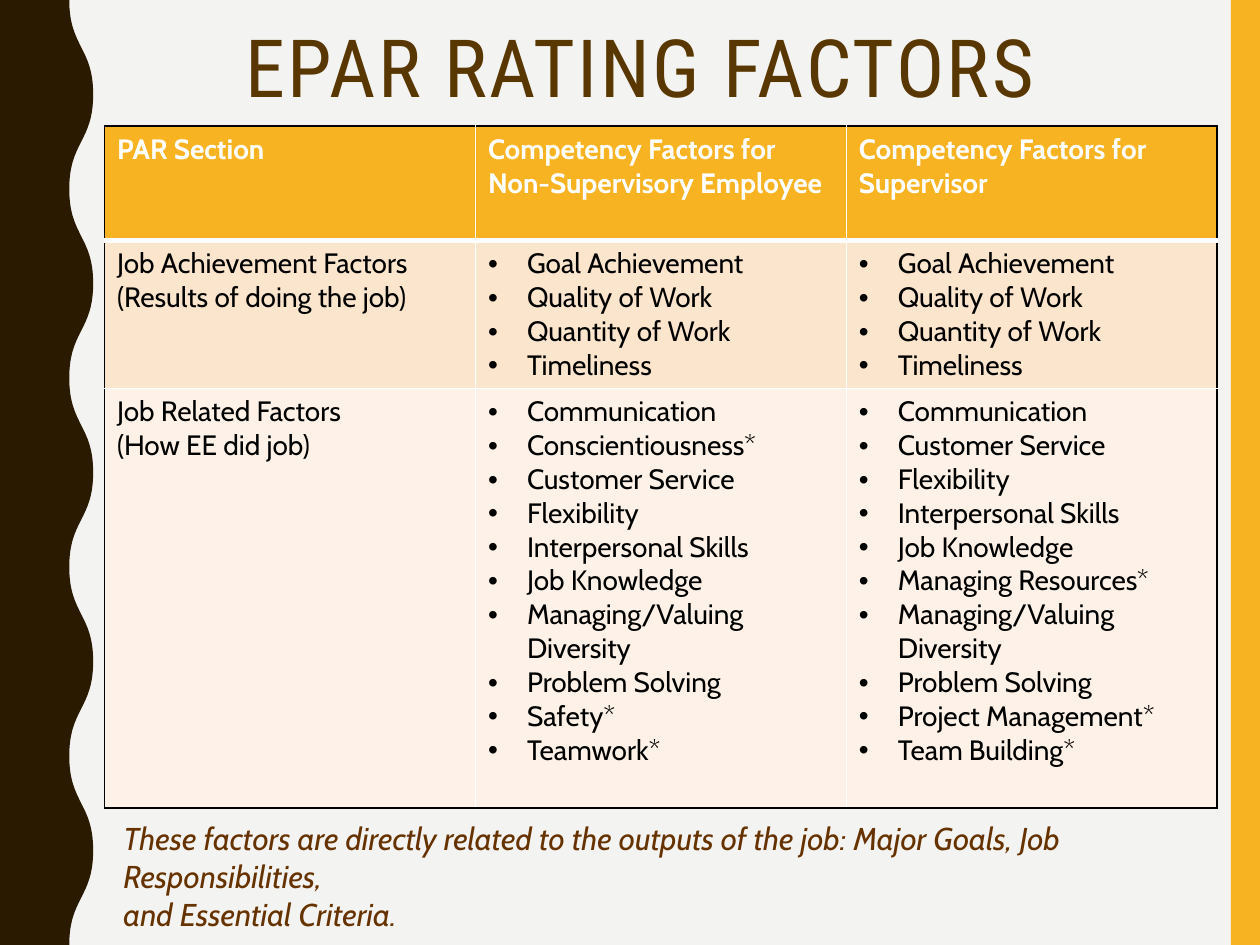
from dataclasses import dataclass

from lxml import etree
from pptx import Presentation
from pptx.dml.color import RGBColor
from pptx.enum.shapes import MSO_SHAPE
from pptx.enum.text import MSO_ANCHOR, MSO_AUTO_SIZE, PP_ALIGN
from pptx.oxml.ns import qn
from pptx.util import Inches, Pt

RECT = MSO_SHAPE.RECTANGLE
TOP = MSO_ANCHOR.TOP
CENTER = PP_ALIGN.CENTER
NO_FIT = MSO_AUTO_SIZE.NONE
GROW = MSO_AUTO_SIZE.SHAPE_TO_FIT_TEXT


@dataclass(frozen=True)
class Theme:
    """Colours, fonts and type sizes of the slide."""
    paper: str = "F3F3F2"
    gold: str = "F8B323"
    dark: str = "2A1A00"
    title: str = "593700"
    note: str = "663300"
    black: str = "000000"
    white: str = "FFFFFF"
    bands: tuple = ("FCE5CD", "FEF2E8")
    title_font: str = "Roboto Condensed"
    body_font: str = "Cabin"
    title_size: float = 45.9
    table_size: float = 16
    note_size: float = 18


THEME = Theme()
HEADERS = [
    "PAR Section",
    "Competency Factors for Non-Supervisory Employee",
    "Competency Factors for Supervisor",
]
ACHIEVEMENT = ["Goal Achievement", "Quality of Work", "Quantity of Work", "Timeliness"]
STAFF = [
    "Communication", "Conscientiousness*", "Customer Service", "Flexibility",
    "Interpersonal Skills", "Job Knowledge", "Managing/Valuing Diversity",
    "Problem Solving", "Safety*", "Teamwork*",
]
SUPERVISOR = [
    "Communication", "Customer Service", "Flexibility", "Interpersonal Skills",
    "Job Knowledge", "Managing Resources*", "Managing/Valuing Diversity",
    "Problem Solving", "Project Management*", "Team Building*",
]
ROWS = [
    [[header] for header in HEADERS],
    [["Job Achievement Factors", "(Results of doing the job)"], ACHIEVEMENT, ACHIEVEMENT],
    [["Job Related Factors", "(How EE did job)"], STAFF, SUPERVISOR],
]
ROW_HEIGHTS = [0.91, 1.17, 3.33]
NOTE = [
    "These factors are directly related to the outputs of the job: "
    "Major Goals, Job Responsibilities,",
    "and Essential Criteria.",
]


def rgb(value):
    """Turn a hex string into a colour."""
    return RGBColor.from_string(value)


def paint(sp, color):
    """Give a shape a plain fill with no line or shadow."""
    sp.shadow.inherit = False
    sp.fill.solid()
    sp.fill.fore_color.rgb = rgb(color)
    sp.line.fill.background()


def write(tf, lines, name, size, color, bold=False, italic=False):
    """Fill a text frame with one paragraph per line."""
    tf.word_wrap = True
    tf.text = "\n".join(lines)
    for p in tf.paragraphs:
        p.font.name = name
        p.font.size = Pt(size)
        p.font.color.rgb = rgb(color)
        p.font.bold = bold
        p.font.italic = italic


def add_bullet(p):
    """Put a hanging bullet on a paragraph."""
    pPr = p._p.get_or_add_pPr()
    pPr.set("marL", str(Inches(0.31)))
    pPr.set("indent", str(-Inches(0.31)))
    pPr.insert(0, etree.Element(qn("a:buFont"), typeface="Arial"))
    pPr.insert(1, etree.Element(qn("a:buChar"), char="•"))


def set_borders(cell, borders):
    """Draw the left, right, top and bottom lines of a cell."""
    tcPr = cell._tc.get_or_add_tcPr()
    for i, (side, (color, width)) in enumerate(zip("LRTB", borders)):
        ln = etree.Element(qn(f"a:ln{side}"), w=str(Pt(width)))
        fill = etree.SubElement(ln, qn("a:solidFill"))
        etree.SubElement(fill, qn("a:srgbClr"), val=color)
        tcPr.insert(i, ln)


def add_segment(outline, kind, *points):
    """Append one drawing command with its points to an outline."""
    command = etree.SubElement(outline, qn(f"a:{kind}"))
    for x, y in points:
        etree.SubElement(command, qn("a:pt"), x=str(round(x)), y=str(round(y)))


def add_side_bar(slide, left, top, width, height):
    """Draw the gold bar along the right edge."""
    bar = slide.shapes.add_shape(RECT, left, top, width, height)
    paint(bar, THEME.gold)


def add_wave(slide, left, top, width, height, trough=Inches(0.55), halves=10):
    """Draw the dark band whose right edge swings between trough and width."""
    builder = slide.shapes.build_freeform(left, top)
    right, bottom = left + width, top + height
    builder.add_line_segments([(right, top), (right, bottom), (left, bottom)])
    sp = builder.convert_to_shape()
    outline = sp._element.find(".//" + qn("a:path"))
    for command in list(outline):
        outline.remove(command)
    half = height / halves
    add_segment(outline, "moveTo", (trough, 0))
    for i in range(halves):
        x1, x2 = (width, trough) if i % 2 else (trough, width)
        middle = (i + 0.5) * half
        add_segment(outline, "cubicBezTo", (x1, middle), (x2, middle), (x2, (i + 1) * half))
    add_segment(outline, "lnTo", (0, height))
    add_segment(outline, "lnTo", (0, 0))
    add_segment(outline, "close")
    paint(sp, THEME.dark)


def add_title(slide, left, top, width, height):
    """Place and format the title placeholder."""
    sp = slide.shapes.title
    sp.left, sp.top, sp.width, sp.height = left, top, width, height
    tf = sp.text_frame
    write(tf, ["EPAR RATING FACTORS"], THEME.title_font, THEME.title_size, THEME.title)
    tf.auto_size = NO_FIT
    tf.vertical_anchor = TOP
    p = tf.paragraphs[0]
    p.alignment = CENTER
    p.line_spacing = 0.9
    p.runs[0].font._element.set("spc", "150")


def add_factor_table(slide, left, top, width, height):
    """Build the table of factors with a black frame and white inner lines."""
    n_rows, n_cols = len(ROWS), len(HEADERS)
    table = slide.shapes.add_table(n_rows, n_cols, left, top, width, height).table
    table.horz_banding = False
    outer, inner, rule = (THEME.black, 1), (THEME.white, 1), (THEME.white, 3)
    for row, row_height in zip(table.rows, ROW_HEIGHTS):
        row.height = Inches(row_height)
    for r, row in enumerate(ROWS):
        head = r == 0
        for c, lines in enumerate(row):
            cell = table.cell(r, c)
            color = THEME.white if head else THEME.black
            write(cell.text_frame, lines, THEME.body_font, THEME.table_size, color, bold=head)
            if not head and c > 0:
                for p in cell.text_frame.paragraphs:
                    add_bullet(p)
            cell.fill.solid()
            cell.fill.fore_color.rgb = rgb(THEME.gold if head else THEME.bands[r - 1])
            set_borders(cell, [
                outer if c == 0 else inner,
                outer if c == n_cols - 1 else inner,
                outer if head else rule if r == 1 else inner,
                rule if head else outer if r == n_rows - 1 else inner,
            ])


def add_note(slide, left, top, width, height):
    """Place the italic remark below the table."""
    tf = slide.shapes.add_textbox(left, top, width, height).text_frame
    write(tf, NOTE, THEME.body_font, THEME.note_size, THEME.note, italic=True)
    tf.auto_size = GROW


def main():
    """Build the slide and save it."""
    prs = Presentation()
    prs.slide_width, prs.slide_height = Inches(10), Inches(7.5)
    slide = prs.slides.add_slide(prs.slide_layouts[5])
    slide.background.fill.solid()
    slide.background.fill.fore_color.rgb = rgb(THEME.paper)
    add_side_bar(slide, Inches(9.77), 0, Inches(0.23), prs.slide_height)
    add_wave(slide, 0, 0, Inches(0.74), prs.slide_height)
    add_title(slide, Inches(0.58), Inches(0.17), Inches(9), Inches(0.67))
    add_factor_table(slide, Inches(0.83), Inches(1), Inches(8.83), Inches(sum(ROW_HEIGHTS)))
    add_note(slide, Inches(0.88), Inches(6.45), Inches(8.75), Inches(0.71))
    prs.save("out.pptx")


if __name__ == "__main__":
    main()
